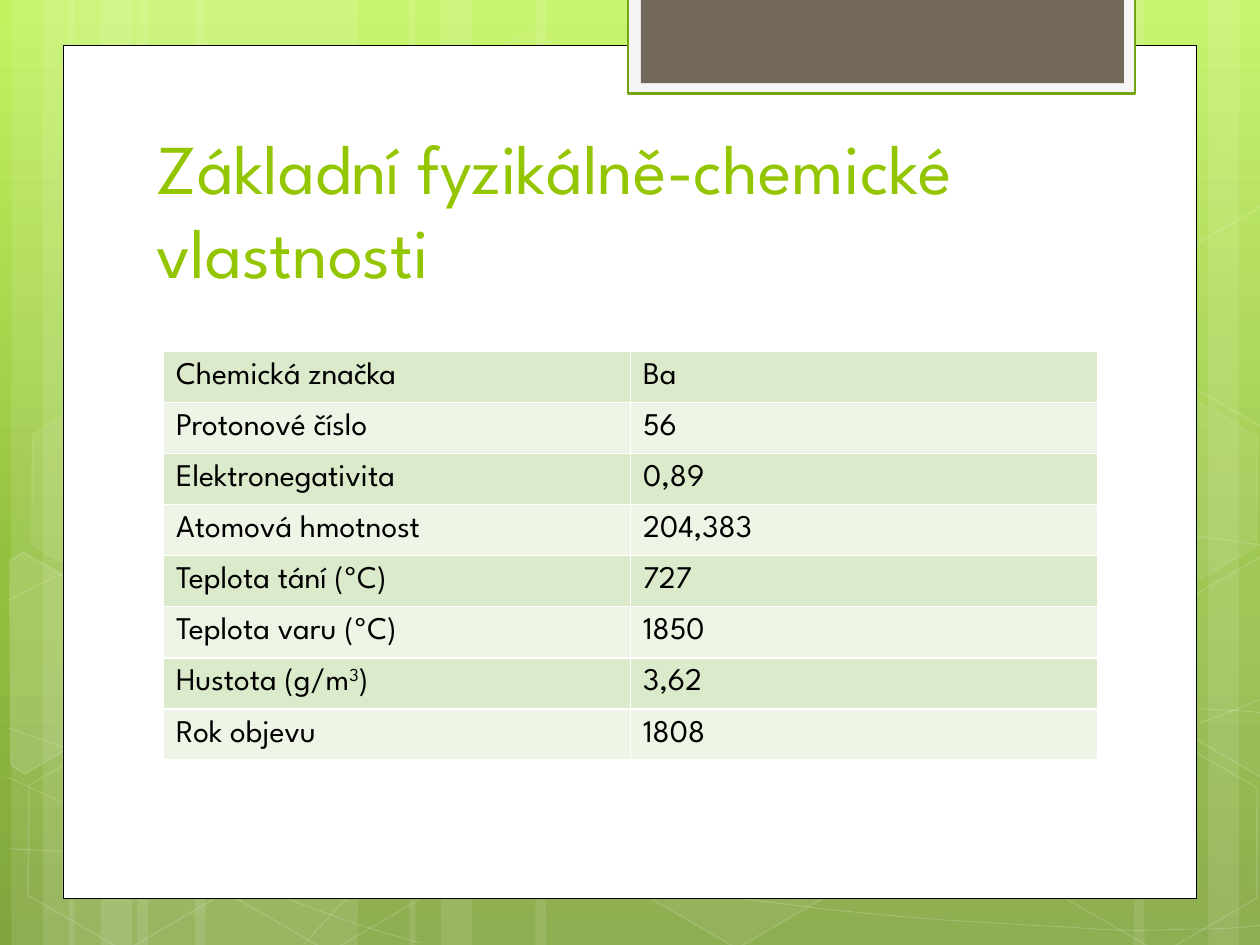
from copy import deepcopy
from math import cos, radians, sin

from lxml import etree
from pptx import Presentation
from pptx.dml.color import RGBColor
from pptx.enum.shapes import MSO_SHAPE
from pptx.enum.text import MSO_ANCHOR, MSO_AUTO_SIZE, PP_ALIGN
from pptx.oxml.ns import qn
from pptx.util import Pt

RECTANGLE, HEXAGON = MSO_SHAPE.RECTANGLE, MSO_SHAPE.HEXAGON
MIDDLE, BOTTOM = MSO_ANCHOR.MIDDLE, MSO_ANCHOR.BOTTOM
LEFT, NO_AUTOFIT = PP_ALIGN.LEFT, MSO_AUTO_SIZE.NONE

TITLE = "Základní fyzikálně-chemické vlastnosti"
PROPERTIES = [
    ("Chemická značka", "Ba"),
    ("Protonové číslo", "56"),
    ("Elektronegativita", "0,89"),
    ("Atomová hmotnost", "204,383"),
    ("Teplota tání (ºC)", "727"),
    ("Teplota varu (ºC)", "1850"),
    ("Hustota (g/m^3^)", "3,62"),
    ("Rok objevu", "1808"),
]

FONT = "League Spartan"
COLORS = {
    "white": "FFFFFF", "black": "000000", "title": "94C600",
    "tab": "71685A", "tab_frame": "F5F5F5", "tab_line": "74A510",
    "odd_row": "DCEACC", "even_row": "EEF5E7",
}
BACKGROUND = [(0, "C3F35F"), (0.62, "93BF3F"), (1, "81A53E")]

WIDTH, HEIGHT, TILT = 720, 540, 30
BEAMS = [
    (78.5, 126), (6.5, 36), (24.5, 60), (111.5, 126), (39.5, 36), (57.5, 60),
    (528, 126), (690.5, 36), (648, 60), (306, 222), (234, 36), (252, 60),
]
CURVES = [
    [[(5, 485)], [(44, 487), (83, 489), (137, 488)], [(191, 487), (258, 486), (330, 479)],
     [(402, 472), (504, 458), (570, 444)], [(636, 431), (703, 409), (725, 397)]],
    [[(5, 343)], [(26, 332), (47, 321), (87, 310)], [(128, 300), (186, 284), (250, 279)],
     [(314, 274), (392, 273), (471, 279)], [(550, 284), (682, 307), (725, 312)]],
    [[(4, 444)], [(91, 484), (178, 523), (241, 539)]],
    [[(5, 416)], [(27, 424), (50, 432), (92, 444)], [(134, 454), (197, 472), (257, 485)],
     [(317, 497), (392, 510), (452, 517)], [(512, 525), (576, 528), (614, 530)],
     [(652, 533), (662, 531), (680, 531)], [(699, 531), (712, 530), (725, 528)]],
    [[(174, 539)], [(187, 525), (200, 510), (217, 498)], [(235, 484), (259, 470), (279, 460)],
     [(300, 450), (312, 446), (338, 438)], [(364, 431), (413, 421), (438, 416)],
     [(464, 411), (467, 411), (490, 410)], [(512, 408), (547, 405), (572, 405)],
     [(597, 404), (638, 405), (638, 405)], [(686, 405)],
     [(699, 406), (711, 406), (718, 407)], [(724, 408), (722, 407), (724, 408)]],
]
HEXAGONS = [
    (240.5, 26, 4, 8), (358, 424, 6, 12), (8, 425.5, 0, 12), (10, 225, 7, 8),
    (125, 426, 0, 12), (542, 326, 10, 12), (600.5, 427, 0, 12), (600.5, 226, 7, 8),
]
CUT_HEXAGONS = [
    ((25.9, 385.9), 10, [(5.8, 320.4), (13.7, 315.4), (69.1, 347.8), (68.4, 410.4),
                         (14.4, 442.1), (6.5, 437)]),
    ((709.2, 374.4), 4, [(666.7, 349.2), (721.4, 317.5), (726.5, 321.1), (726.5, 441.4),
                         (721.4, 444.2), (666.7, 412.6)]),
    ((709.2, 173.5), 0, [(666.7, 149), (721.4, 117.4), (727.2, 121), (726.5, 241.2),
                         (721.4, 244.1), (666.7, 212.4)]),
]


def paint(color_format, name):
    color_format.rgb = RGBColor.from_string(COLORS[name])


def set_alpha(fill_parent, opacity):
    if opacity < 100:
        color = fill_parent.find(qn("a:solidFill")).find(qn("a:srgbClr"))
        etree.SubElement(color, qn("a:alpha")).set("val", str(opacity * 1000))


def style(shape, fill="white", fill_opacity=100, line=None, line_width=1, line_opacity=100):
    shape.shadow.inherit = False
    properties = shape._element.spPr
    if fill_opacity:
        shape.fill.solid()
        paint(shape.fill.fore_color, fill)
        set_alpha(properties, fill_opacity)
    else:
        shape.fill.background()
    if line:
        shape.line.width = Pt(line_width)
        paint(shape.line.color, line)
        set_alpha(properties.find(qn("a:ln")), line_opacity)
    else:
        shape.line.fill.background()


def add_preset(kind, left, top, width, height, **look):
    shape = slide.shapes.add_shape(kind, Pt(left), Pt(top), Pt(width), Pt(height))
    style(shape, **look)
    return shape


def add_outline(points, close, **look):
    vertices = [(Pt(x), Pt(y)) for x, y in points]
    builder = slide.shapes.build_freeform(*vertices[0])
    builder.add_line_segments(vertices[1:], close=close)
    outline = builder.convert_to_shape()
    style(outline, line="white", **look)
    return outline


def add_curve(segments):
    points = [point for segment in segments for point in segment]
    curve = add_outline(points, False, fill_opacity=0, line_width=0.5, line_opacity=20)
    lines = iter(list(curve._element.iter(qn("a:lnTo"))))
    for segment in segments[1:]:
        steps = [next(lines) for _ in segment]
        if len(steps) == 3:
            bezier = etree.Element(qn("a:cubicBezTo"))
            steps[0].addprevious(bezier)
            for step in steps:
                bezier.append(step[0])
                step.getparent().remove(step)


def turn_back(point, center):
    angle = radians(-TILT)
    dx, dy = point[0] - center[0], point[1] - center[1]
    return (center[0] + dx * cos(angle) - dy * sin(angle),
            center[1] + dx * sin(angle) + dy * cos(angle))


def set_font(paragraph, size, color):
    paragraph.font.name = FONT
    paragraph.font.size = Pt(size)
    paint(paragraph.font.color, color)


def add_borders(cell):
    properties = cell._tc.get_or_add_tcPr()
    for position, side in enumerate(("a:lnL", "a:lnR", "a:lnT", "a:lnB")):
        border = etree.Element(qn(side), w=str(Pt(1)))
        fill = etree.SubElement(border, qn("a:solidFill"))
        etree.SubElement(fill, qn("a:srgbClr"), val=COLORS["white"])
        properties.insert(position, border)


def fill_cell(cell, text, color):
    cell.fill.solid()
    paint(cell.fill.fore_color, color)
    cell.vertical_anchor = MIDDLE
    paragraph = cell.text_frame.paragraphs[0]
    set_font(paragraph, 18, "black")
    for i, part in enumerate(text.split("^")):
        run = paragraph.add_run()
        run.text = part
        if i % 2:
            run._r.get_or_add_rPr().set("baseline", "30000")
    add_borders(cell)


prs = Presentation()
prs.slide_width, prs.slide_height = Pt(WIDTH), Pt(HEIGHT)
slide = prs.slides.add_slide(prs.slide_layouts[5])

backdrop = slide.background.fill
backdrop.gradient()
backdrop.gradient_angle = 270
stop_list = slide.element.find(".//" + qn("a:gsLst"))
stop_list.append(deepcopy(stop_list[0]))
for stop, (position, color) in zip(backdrop.gradient_stops, BACKGROUND):
    stop.position = position
    stop.color.rgb = RGBColor.from_string(color)

for left, width in BEAMS:
    add_preset(RECTANGLE, left, 0, width, HEIGHT, fill_opacity=10)
for segments in CURVES:
    add_curve(segments)
for left, top, fill_opacity, line_opacity in HEXAGONS:
    hexagon = add_preset(HEXAGON, left, top, 126, 109.5, fill_opacity=fill_opacity,
                         line="white", line_opacity=line_opacity)
    hexagon.adjustments[0] = 0.285
    hexagon.rotation = TILT
for center, fill_opacity, corners in CUT_HEXAGONS:
    cut_hexagon = add_outline([turn_back(corner, center) for corner in corners], True,
                              fill_opacity=fill_opacity, line_opacity=12)
    cut_hexagon.rotation = TILT

add_preset(RECTANGLE, 36, 26, 648, 487.5, line="black", line_width=0.5)
add_preset(RECTANGLE, 359, -1.5, 289.8, 55, fill="tab_frame", line="tab_line", line_width=1.25)
add_preset(RECTANGLE, 366.2, -1.5, 276, 49, fill="tab")

title = slide.shapes.title
title.left, title.top, title.width, title.height = Pt(82.2), Pt(80.5), Pt(553), Pt(90)
title.text_frame.text = TITLE
title.text_frame.auto_size = NO_AUTOFIT
title.text_frame.vertical_anchor = BOTTOM
title.text_frame.paragraphs[0].alignment = LEFT
set_font(title.text_frame.paragraphs[0], 40, "title")
slide.shapes._spTree.append(title._element)

table = slide.shapes.add_table(len(PROPERTIES), 2, Pt(93.4), Pt(200.7), Pt(533.8), Pt(233.6)).table
for r, row in enumerate(PROPERTIES):
    for c, text in enumerate(row):
        fill_cell(table.cell(r, c), text, "even_row" if r % 2 else "odd_row")

prs.save("out.pptx")
